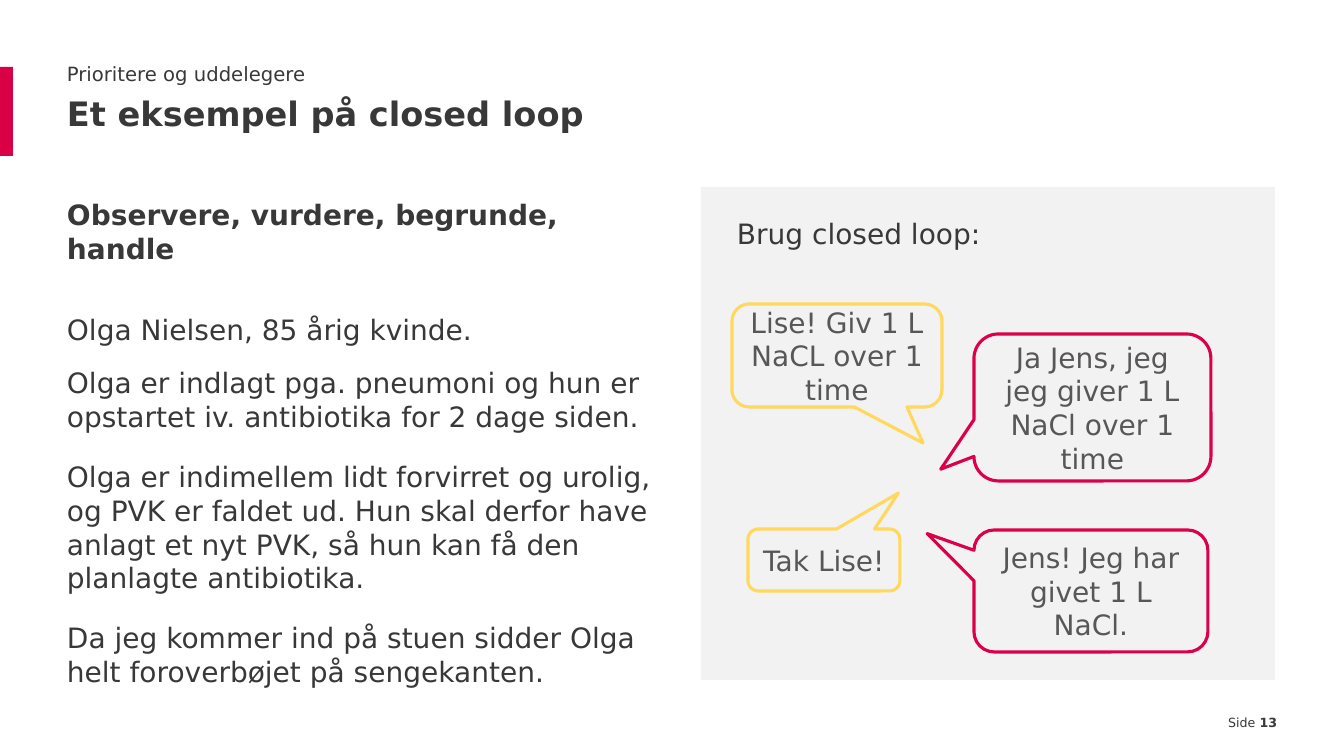
from pptx import Presentation
from pptx.dml.color import RGBColor
from pptx.enum.shapes import MSO_SHAPE
from pptx.enum.text import MSO_ANCHOR, PP_ALIGN
from pptx.util import Pt

RECT = MSO_SHAPE.RECTANGLE
BUBBLE = MSO_SHAPE.ROUNDED_RECTANGULAR_CALLOUT
TOP, MIDDLE = MSO_ANCHOR.TOP, MSO_ANCHOR.MIDDLE
LEFT, CENTER, RIGHT = PP_ALIGN.LEFT, PP_ALIGN.CENTER, PP_ALIGN.RIGHT
SCALE = 914400 / 100.8
COLORS = {"text": "383838", "speech": "575757", "red": "DA0046",
          "ruby": "DC0048", "yellow": "FFD85D", "panel": "F2F2F2"}

STORY = [
    (0, True, "Observere, vurdere, begrunde, handle"),
    (34, False, "Olga Nielsen, 85 årig kvinde."),
    (14, False, "Olga er indlagt pga. pneumoni og hun er opstartet iv. "
                "antibiotika for 2 dage siden."),
    (19, False, "Olga er indimellem lidt forvirret og urolig, og PVK er faldet "
                "ud. Hun skal derfor have anlagt et nyt PVK, så hun kan få den "
                "planlagte antibiotika."),
    (19, False, "Da jeg kommer ind på stuen sidder Olga helt foroverbøjet på "
                "sengekanten."),
]
SPEECH = [
    ((732, 304, 210, 103), "yellow", (0.41, 0.85),
     "Lise! Giv 1 L NaCL over 1 time"),
    ((974, 334, 237, 147), "ruby", (-0.64, 0.42),
     "Ja Jens, jeg jeg giver 1 L NaCl over 1 time"),
    ((974, 530, 234, 122), "ruby", (-0.7, -0.47),
     "Jens! Jeg har givet 1 L NaCl."),
    ((748, 529, 152, 62), "yellow", (0.49, -1.08), "Tak Lise!"),
]


def px(num):
    """Turn pixels into EMU."""
    return round(num * SCALE)


def tint(name):
    """Return a named colour."""
    return RGBColor.from_string(COLORS[name])


def apply(item, style):
    """Set every attribute listed in a dict."""
    for key, value in style.items():
        setattr(item, key, value)


def setup(frame, anchor, side, edge):
    """Set wrapping, anchor and margins of a text frame."""
    apply(frame, {"word_wrap": True, "vertical_anchor": anchor,
                  "margin_left": px(side), "margin_right": px(side),
                  "margin_top": px(edge), "margin_bottom": px(edge)})


def write(para, text, size, bold=False, color="text"):
    """Add one styled run to a paragraph."""
    run = para.add_run()
    run.text = text
    apply(run.font, {"name": "DejaVu Sans", "size": Pt(size), "bold": bold})
    run.font.color.rgb = tint(color)


def label(slide, box, runs, size, align=LEFT, lead=1.0):
    """Add a text box with one paragraph of (text, bold) runs."""
    frame = slide.shapes.add_textbox(*map(px, box)).text_frame
    setup(frame, TOP, 0, 0)
    para = frame.paragraphs[0]
    apply(para, {"alignment": align, "line_spacing": lead})
    for text, bold in runs:
        write(para, text, size, bold)


def story(slide, box, parts):
    """Add the case text as spaced paragraphs."""
    frame = slide.shapes.add_textbox(*map(px, box)).text_frame
    setup(frame, TOP, 0, 0)
    for num, (gap, bold, text) in enumerate(parts):
        para = frame.add_paragraph() if num else frame.paragraphs[0]
        para.space_before = Pt(gap)
        write(para, text, 20, bold)


def block(slide, box, color):
    """Add a plain filled rectangle."""
    shape = slide.shapes.add_shape(RECT, *map(px, box))
    shape.shadow.inherit = False
    shape.fill.solid()
    shape.fill.fore_color.rgb = tint(color)
    shape.line.fill.background()


def bubble(slide, box, color, tip, text):
    """Add an outlined speech bubble with its tip at a relative point."""
    shape = slide.shapes.add_shape(BUBBLE, *map(px, box))
    shape.shadow.inherit = False
    shape.adjustments[0], shape.adjustments[1] = tip
    shape.fill.background()
    shape.line.color.rgb = tint(color)
    shape.line.width = Pt(2.25)
    setup(shape.text_frame, MIDDLE, 12, 6)
    para = shape.text_frame.paragraphs[0]
    para.alignment = CENTER
    write(para, text, 20, color="speech")


def main():
    """Build and save the slide."""
    deck = Presentation()
    apply(deck, {"slide_width": px(1344), "slide_height": px(756)})
    slide = deck.slides.add_slide(deck.slide_layouts[6])
    block(slide, (0, 67, 13, 89), "red")
    block(slide, (701, 187, 574, 493), "panel")
    label(slide, (67, 62, 1210, 24), [("Prioritere og uddelegere", False)], 14)
    label(slide, (67, 97, 1210, 58), [("Et eksempel på closed loop", True)],
          24, lead=0.9)
    story(slide, (67, 198, 591, 492), STORY)
    label(slide, (737, 217, 409, 43), [("Brug closed loop:", False)], 20)
    for item in SPEECH:
        bubble(slide, *item)
    label(slide, (1108, 715, 169, 16), [("Side ", False), ("13", True)],
          9, RIGHT)
    deck.save("out.pptx")


if __name__ == "__main__":
    main()
